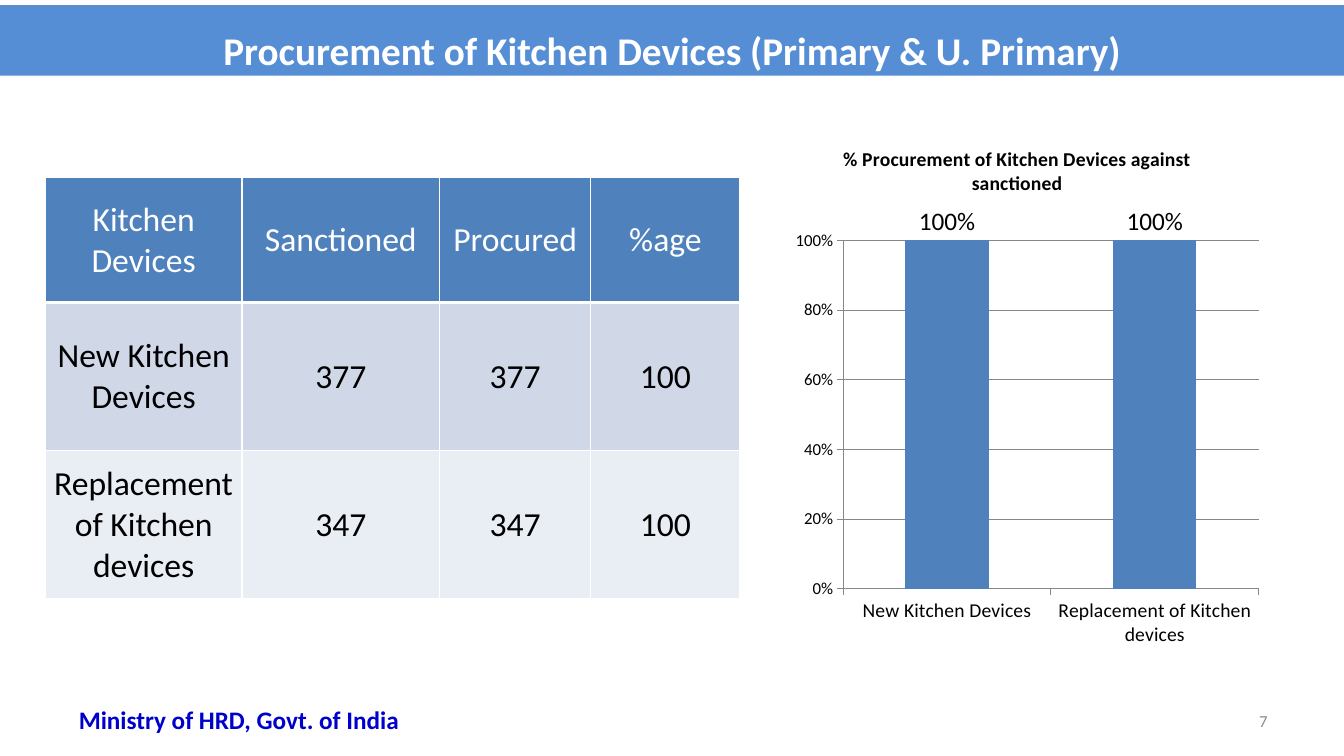
from dataclasses import dataclass

from lxml import etree
from pptx import Presentation
from pptx.chart.data import CategoryChartData
from pptx.dml.color import RGBColor
from pptx.enum.chart import XL_CHART_TYPE, XL_LABEL_POSITION, XL_TICK_MARK
from pptx.enum.text import MSO_ANCHOR, PP_ALIGN
from pptx.oxml import parse_xml
from pptx.oxml.ns import nsdecls, qn
from pptx.util import Inches, Pt

CENTER, RIGHT = PP_ALIGN.CENTER, PP_ALIGN.RIGHT
TOP, MIDDLE = MSO_ANCHOR.TOP, MSO_ANCHOR.MIDDLE
COLUMNS = XL_CHART_TYPE.COLUMN_CLUSTERED
OUTSIDE_END = XL_LABEL_POSITION.OUTSIDE_END
TICK_OUT, TICK_NONE = XL_TICK_MARK.OUTSIDE, XL_TICK_MARK.NONE


@dataclass(frozen=True)
class Theme:
    font: str = "Calibri"
    banner: str = "558ED5"
    accent: str = "4F81BD"
    bands: tuple = ("D0D8E8", "E9EDF4")
    white: str = "FFFFFF"
    black: str = "000000"
    axis: str = "878787"
    number: str = "8C8C8C"
    ministry: str = "0000CC"
    title_size: int = 28
    table_size: int = 24
    label_size: int = 18
    caption_size: int = 14
    small_size: int = 12


class SlideBuilder:
    def __init__(self, deck, theme):
        self.theme = theme
        self.page = deck.slides.add_slide(deck.slide_layouts[5])

    def assign(self, target, values):
        for name, value in values.items():
            setattr(target, name, value)

    def style(self, font, size, color, bold=False):
        self.assign(font, {"name": self.theme.font, "size": Pt(size), "bold": bold})
        font.color.rgb = RGBColor.from_string(color)

    def fill(self, target, color):
        target.fill.solid()
        target.fill.fore_color.rgb = RGBColor.from_string(color)

    def line(self, line):
        line.width = Pt(0.75)
        line.color.rgb = RGBColor.from_string(self.theme.axis)

    def add_words(self, frame, text, size, color, bold=False, align=CENTER):
        para = frame.paragraphs[0]
        para.alignment = align
        span = para.add_run()
        span.text = text
        self.style(span.font, size, color, bold)
        return para

    def title(self, text, position):
        box = self.page.shapes.title
        self.assign(box, dict(zip(("left", "top", "width", "height"), map(Inches, position))))
        self.fill(box, self.theme.banner)
        box.text_frame.vertical_anchor = MIDDLE
        para = self.add_words(box.text_frame, text, self.theme.title_size, self.theme.white, True)
        para.line_spacing = 1.4

    def text(self, text, position, size, color, bold=False, align=CENTER, anchor=TOP):
        box = self.page.shapes.add_textbox(*map(Inches, position))
        self.assign(box.text_frame, {"word_wrap": True, "vertical_anchor": anchor})
        self.add_words(box.text_frame, text, size, color, bold, align)

    def borders(self, cell, top, bottom):
        properties = cell._tc.get_or_add_tcPr()
        for index, (side, width) in enumerate(zip("LRTB", (1, 1, top, bottom))):
            line = parse_xml(
                f'<a:ln{side} {nsdecls("a")} w="{Pt(width)}"><a:solidFill>'
                f'<a:srgbClr val="{self.theme.white}"/></a:solidFill></a:ln{side}>')
            properties.insert(index, line)

    def table(self, rows, left, top, widths, heights):
        theme = self.theme
        position = map(Inches, (left, top, sum(widths), sum(heights)))
        table = self.page.shapes.add_table(len(rows), len(widths), *position).table
        for column, width in zip(table.columns, widths):
            column.width = Inches(width)
        for row, height in zip(table.rows, heights):
            row.height = Inches(height)
        margins = dict.fromkeys(("margin_left", "margin_top", "margin_right"), Inches(0.01))
        layout = {**margins, "margin_bottom": 0, "vertical_anchor": MIDDLE}
        for r, values in enumerate(rows):
            ink = theme.black if r else theme.white
            back = theme.bands[(r - 1) % 2] if r else theme.accent
            for c, value in enumerate(values):
                cell = table.cell(r, c)
                self.assign(cell, layout)
                self.add_words(cell.text_frame, value, theme.table_size, ink)
                self.fill(cell, back)
                self.borders(cell, 3 if r == 1 else 1, 1 if r else 3)

    def axis(self, axis, size):
        self.assign(axis, {"major_tick_mark": TICK_OUT, "minor_tick_mark": TICK_NONE})
        self.style(axis.tick_labels.font, size, self.theme.black)
        self.line(axis.format.line)

    def plot_area(self, chart, **fractions):
        area = chart._chartSpace.find(".//" + qn("c:plotArea"))
        for layout in area.findall(qn("c:layout")):
            area.remove(layout)
        layout = etree.Element(qn("c:layout"))
        manual = etree.SubElement(layout, qn("c:manualLayout"))
        values = {"layoutTarget": "inner", "xMode": "edge", "yMode": "edge", **fractions}
        for name, value in values.items():
            etree.SubElement(manual, qn("c:" + name)).set("val", str(value))
        area.insert(0, layout)

    def chart(self, title, categories, values, position):
        theme = self.theme
        data = CategoryChartData(number_format="0%")
        data.categories = categories
        data.add_series("Series 1", values)
        chart = self.page.shapes.add_chart(COLUMNS, *map(Inches, position), data).chart
        self.style(chart.font, theme.label_size, theme.black)
        self.assign(chart, {"has_legend": False, "has_title": True})
        self.add_words(chart.chart_title.text_frame, title, theme.caption_size, theme.black, True)

        self.axis(chart.category_axis, theme.caption_size)
        scale = chart.value_axis
        self.axis(scale, theme.small_size)
        self.assign(scale, {"minimum_scale": 0, "maximum_scale": 1, "major_unit": 0.2,
                            "has_major_gridlines": True})
        self.line(scale.major_gridlines.format.line)
        percent = {"number_format": "0%", "number_format_is_linked": False}
        self.assign(scale.tick_labels, percent)

        plot = chart.plots[0]
        self.assign(plot, {"gap_width": 150, "vary_by_categories": False,
                           "has_data_labels": True})
        self.assign(plot.data_labels, {**percent, "show_value": True, "position": OUTSIDE_END})
        self.style(plot.data_labels.font, theme.label_size, theme.black)
        self.fill(plot.series[0].format, theme.accent)
        self.plot_area(chart, x=0.14, y=0.22, w=0.86, h=0.67)


def main():
    deck = Presentation()
    deck.slide_width, deck.slide_height = Inches(13.33), Inches(7.5)
    theme = Theme()
    slide = SlideBuilder(deck, theme)
    devices = ["New Kitchen Devices", "Replacement of Kitchen devices"]

    slide.title("Procurement of Kitchen Devices (Primary & U. Primary)", (0, 0.05, 13.33, 0.7))
    slide.table(
        [["Kitchen Devices", "Sanctioned", "Procured", "%age"],
         [devices[0], "377", "377", "100"],
         [devices[1], "347", "347", "100"]],
        0.45, 1.76, (1.95, 1.96, 1.5, 1.48), (1.24, 1.47, 1.47))
    slide.chart("% Procurement of Kitchen Devices against sanctioned",
                devices, (1, 1), (7.69, 1.25, 4.8, 5.17))
    slide.text("7", (9.56, 6.95, 3.11, 0.4), theme.small_size, theme.number,
               align=RIGHT, anchor=MIDDLE)
    slide.text("Ministry of HRD, Govt. of India", (0.41, 6.94, 3.92, 0.4),
               theme.label_size, theme.ministry, bold=True)
    deck.save("out.pptx")


if __name__ == "__main__":
    main()
